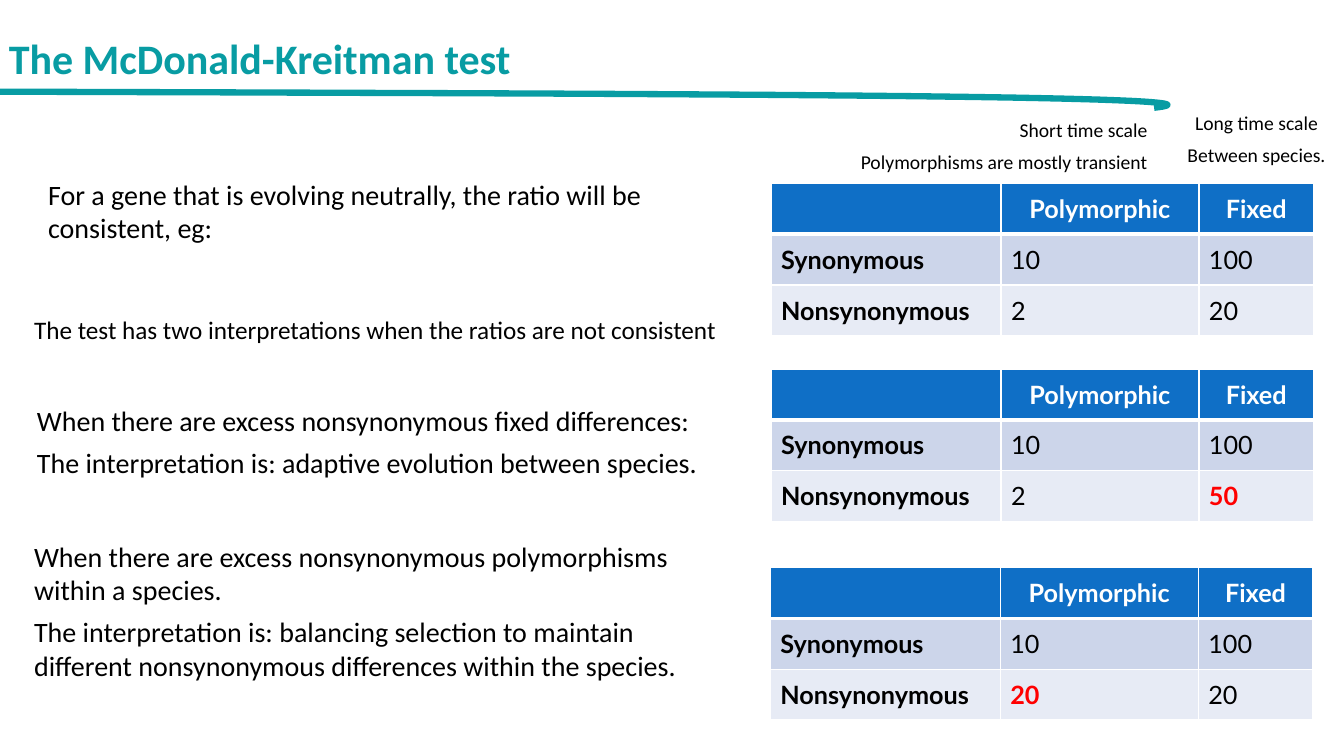
from lxml import etree
from pptx import Presentation
from pptx.dml.color import RGBColor
from pptx.enum.text import MSO_ANCHOR, PP_ALIGN
from pptx.oxml.ns import qn
from pptx.util import Pt

LEFT, CENTER, RIGHT = PP_ALIGN.LEFT, PP_ALIGN.CENTER, PP_ALIGN.RIGHT
TOP, MIDDLE = MSO_ANCHOR.TOP, MSO_ANCHOR.MIDDLE
TEAL, BLUE, RED, BLACK, WHITE = "089CA3", "0F6FC6", "FF0000", "000000", "FFFFFF"
ROW_FILLS = [BLUE, "CCD5EA", "E7EBF5"]
COLUMN_WIDTHS = [164.2, 141.4, 82]
ROW_HEIGHT = 36.3
CURVE_STEPS = 60


def color(hex_string):
    """Return the colour for a hex string."""
    return RGBColor.from_string(hex_string)


def set_font(paragraph, name, size, hex_string, bold=False):
    """Set the font of a whole paragraph."""
    font = paragraph.font
    font.name, font.size, font.bold = name, Pt(size), bold
    font.color.rgb = color(hex_string)


def add_text(slide, box, lines, size, align=LEFT, anchor=TOP, hex_string=BLACK, bold=False):
    """Place a wrapped text box with one paragraph per line."""
    frame = slide.shapes.add_textbox(*map(Pt, box)).text_frame
    frame.word_wrap = True
    frame.vertical_anchor = anchor
    for index, line in enumerate(lines):
        paragraph = frame.add_paragraph() if index else frame.paragraphs[0]
        paragraph.text = line
        paragraph.alignment = align
        if index:
            paragraph.space_before = Pt(6)
        set_font(paragraph, "Calibri", size, hex_string, bold)


def add_title(slide, box):
    """Place the title and the hooked stroke beneath it."""
    left, top = box[:2]
    controls = [(0.7, 65.5), (453.6, 67), (906.5, 67.7), (825.1, 77)]
    points = []
    for step in range(CURVE_STEPS + 1):
        t = step / CURVE_STEPS
        weights = [(1 - t) ** 3, 3 * t * (1 - t) ** 2, 3 * t ** 2 * (1 - t), t ** 3]
        x, y = (sum(w * c for w, c in zip(weights, axis)) for axis in zip(*controls))
        points.append((Pt(left + x), Pt(top + y)))
    builder = slide.shapes.build_freeform(*points[0])
    builder.add_line_segments(points[1:], close=False)
    stroke = builder.convert_to_shape()
    stroke.shadow.inherit = False
    stroke.fill.background()
    stroke.line.color.rgb = color(TEAL)
    stroke.line.width = Pt(4.5)
    add_text(slide, box, ["The McDonald-Kreitman test"], 30, anchor=MIDDLE,
             hex_string=TEAL, bold=True)


def set_borders(cell, bottom_width):
    """Draw white borders around a cell."""
    properties = cell._tc.get_or_add_tcPr()
    for index, side in enumerate("LRTB"):
        width = bottom_width if side == "B" else 1
        line = etree.Element(qn(f"a:ln{side}"), w=str(Pt(width)))
        fill = etree.SubElement(line, qn("a:solidFill"))
        etree.SubElement(fill, qn("a:srgbClr"), val=WHITE)
        properties.insert(index, line)


def add_count_table(slide, left, top, nonsynonymous, highlight=None):
    """Place a table of counts, with one nonsynonymous count in red if asked."""
    rows = [["", "Polymorphic", "Fixed"],
            ["Synonymous", "10", "100"],
            ["Nonsynonymous", *nonsynonymous]]
    table = slide.shapes.add_table(3, 3, Pt(left), Pt(top), Pt(sum(COLUMN_WIDTHS)),
                                   Pt(3 * ROW_HEIGHT)).table
    for column, width in zip(table.columns, COLUMN_WIDTHS):
        column.width = Pt(width)
    for row_index, row in enumerate(rows):
        table.rows[row_index].height = Pt(ROW_HEIGHT)
        header = row_index == 0
        for column_index, text in enumerate(row):
            cell = table.cell(row_index, column_index)
            cell.fill.solid()
            cell.fill.fore_color.rgb = color(ROW_FILLS[row_index])
            set_borders(cell, 3 if header else 1)
            cell.vertical_anchor = MIDDLE
            cell.text = text
            paragraph = cell.text_frame.paragraphs[0]
            paragraph.alignment = CENTER if header else LEFT
            marked = row_index == 2 and column_index == highlight
            text_color = WHITE if header else RED if marked else BLACK
            set_font(paragraph, "Lato", 18, text_color, header or column_index == 0 or marked)


def add_explanations(slide, left):
    """Place the statements that explain the tables."""
    add_text(slide, (left + 10, 123, 509, 55),
             ["For a gene that is evolving neutrally, the ratio will be consistent, eg:"], 20)
    add_text(slide, (left, 221, 513, 29),
             ["The test has two interpretations when the ratios are not consistent"], 18)
    add_text(slide, (left + 2, 285, 509, 62),
             ["When there are excess nonsynonymous fixed differences:",
              "The interpretation is: adaptive evolution between species."], 20)
    add_text(slide, (left, 381.5, 509, 110),
             ["When there are excess nonsynonymous polymorphisms within a species.",
              "The interpretation is: balancing selection to maintain different "
              "nonsynonymous differences within the species."], 20)


def add_tables(slide, left, top):
    """Place the three tables and the labels above the first one."""
    add_text(slide, (left + 54, top - 50.5, 222, 48),
             ["Short time scale", "Polymorphisms are mostly transient"], 14, RIGHT)
    add_text(slide, (left + 289.5, top - 55.5, 114.5, 48),
             ["Long time scale", "Between species."], 14, CENTER)
    add_count_table(slide, left, top, ["2", "20"])
    add_count_table(slide, left, top + 132.5, ["2", "50"], highlight=2)
    add_count_table(slide, left - 0.5, top + 274.5, ["20", "20"], highlight=1)


def main():
    """Build the slide and save it."""
    presentation = Presentation()
    presentation.slide_width, presentation.slide_height = Pt(960), Pt(540)
    slide = presentation.slides.add_slide(presentation.slide_layouts[6])
    add_title(slide, (-0.7, 0, 958, 83))
    add_explanations(slide, 17.3)
    add_tables(slide, 550.8, 131)
    presentation.save("out.pptx")


if __name__ == "__main__":
    main()
